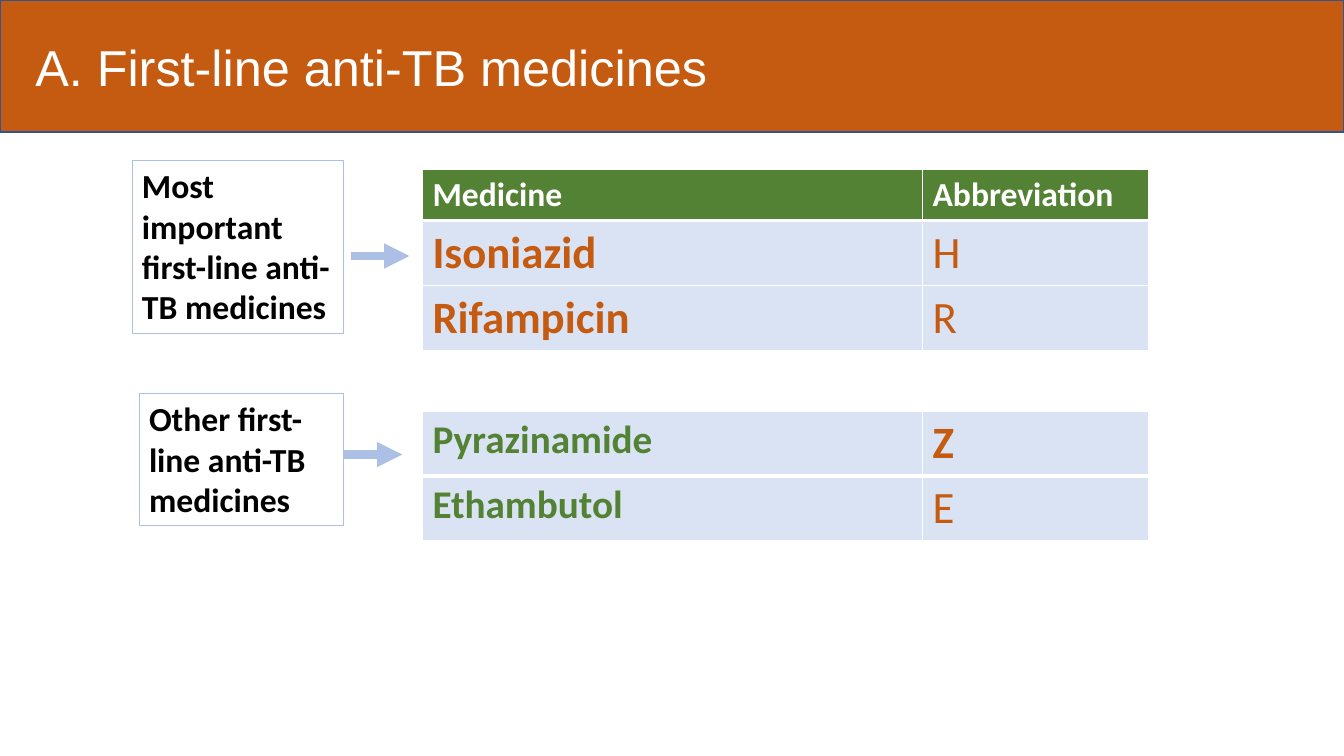
from lxml.etree import SubElement
from pptx import Presentation
from pptx.dml.color import RGBColor
from pptx.enum.shapes import MSO_CONNECTOR, MSO_SHAPE
from pptx.enum.text import MSO_ANCHOR, MSO_AUTO_SIZE, PP_ALIGN
from pptx.oxml.ns import qn
from pptx.util import Inches, Pt

COLORS = {
    "orange": "C55A11", "green": "548235", "pale": "DAE3F3", "blue": "ABC0E4",
    "navy": "325491", "white": "FFFFFF", "black": "000000",
}
TITLE = "A. First-line anti-TB medicines"

# Cell styles: size, colour, bold, fill
HEADER = (24, "white", True, "green")
MAIN_NAME = (32, "orange", True, "pale")
OTHER_NAME = (28, "green", True, "pale")
LETTER = (32, "orange", False, "pale")

# Each row: height, then (text, style) for each cell
GROUPS = [
    {
        "label": "Most important first-line anti-TB medicines",
        "box": (1.31, 1.59, 2.1, 1.72),
        "arrow": (3.48, 2.54),
        "table_top": 1.68,
        "rows": [
            (0.49, ("Medicine", HEADER), ("Abbreviation", HEADER)),
            (0.64, ("Isoniazid", MAIN_NAME), ("H", LETTER)),
            (0.64, ("Rifampicin", MAIN_NAME), ("R", LETTER)),
        ],
    },
    {
        "label": "Other first-line anti-TB medicines",
        "box": (1.38, 3.9, 2.03, 1.31),
        "arrow": (3.41, 4.51),
        "table_top": 4.08,
        "rows": [
            (0.64, ("Pyrazinamide", OTHER_NAME), ("Z", MAIN_NAME)),
            (0.63, ("Ethambutol", OTHER_NAME), ("E", LETTER)),
        ],
    },
]
TABLE_LEFT = 4.19
COLUMN_WIDTHS = (4.96, 2.24)
ARROW_LENGTH = 0.58


def color(name):
    return RGBColor.from_string(COLORS[name])


def write(text_frame, text, size, color_name, bold=False, font="Calibri"):
    paragraph = text_frame.paragraphs[0]
    paragraph.alignment = PP_ALIGN.LEFT
    run = paragraph.add_run()
    run.text = text
    run.font.name = font
    run.font.size = Pt(size)
    run.font.bold = bold
    run.font.color.rgb = color(color_name)


def add_title(slide):
    title = slide.shapes.title
    title.left, title.top = Inches(0), Inches(0)
    title.width, title.height = Inches(13.33), Inches(1.31)
    title.fill.solid()
    title.fill.fore_color.rgb = color("orange")
    title.line.color.rgb = color("navy")
    title.line.width = Pt(1)
    text_frame = title.text_frame
    text_frame.auto_size = MSO_AUTO_SIZE.NONE
    text_frame.vertical_anchor = MSO_ANCHOR.MIDDLE
    text_frame.margin_left = Inches(0.35)
    write(text_frame, TITLE, 36, "white", font="Arial")


def add_label(slide, text, box):
    shape = slide.shapes.add_shape(MSO_SHAPE.RECTANGLE, *map(Inches, box))
    shape.shadow.inherit = False
    shape.fill.background()
    shape.line.color.rgb = color("blue")
    shape.line.width = Pt(0.75)
    shape.text_frame.word_wrap = True
    shape.text_frame.vertical_anchor = MSO_ANCHOR.TOP
    write(shape.text_frame, text, 24, "black", bold=True)


def add_arrow(slide, left, top):
    arrow = slide.shapes.add_connector(
        MSO_CONNECTOR.STRAIGHT, Inches(left), Inches(top),
        Inches(left + ARROW_LENGTH), Inches(top))
    arrow.line.color.rgb = color("blue")
    arrow.line.width = Pt(6)
    SubElement(arrow.line._get_or_add_ln(), qn("a:tailEnd"), type="triangle")
    SubElement(arrow._element.spPr, qn("a:effectLst"))


def add_borders(cell, widths):
    """Draw white borders; widths maps side letters to points."""
    properties = cell._tc.get_or_add_tcPr()
    for side, width in widths.items():
        line = SubElement(properties, qn("a:ln" + side), w=str(Pt(width)))
        fill = SubElement(line, qn("a:solidFill"))
        SubElement(fill, qn("a:srgbClr"), val=COLORS["white"])


def add_medicine_table(slide, top, rows):
    table = slide.shapes.add_table(
        len(rows), len(COLUMN_WIDTHS), Inches(TABLE_LEFT), Inches(top),
        Inches(sum(COLUMN_WIDTHS)), Inches(sum(row[0] for row in rows))).table
    table.first_row = table.horz_banding = False
    for column, width in zip(table.columns, COLUMN_WIDTHS):
        column.width = Inches(width)
    for row_index, (height, *cells) in enumerate(rows):
        table.rows[row_index].height = Inches(height)
        top_width = 3 if row_index == 1 else 1
        bottom_width = 3 if row_index == 0 else 1
        for column_index, (text, style) in enumerate(cells):
            size, color_name, bold, fill_name = style
            cell = table.cell(row_index, column_index)
            add_borders(cell, {"L": 1, "R": 1, "T": top_width, "B": bottom_width})
            cell.fill.solid()
            cell.fill.fore_color.rgb = color(fill_name)
            write(cell.text_frame, text, size, color_name, bold)


def main():
    presentation = Presentation()
    presentation.slide_width = Inches(13.33)
    presentation.slide_height = Inches(7.5)
    slide = presentation.slides.add_slide(presentation.slide_layouts[5])
    add_title(slide)
    for group in GROUPS:
        add_label(slide, group["label"], group["box"])
        add_arrow(slide, *group["arrow"])
        add_medicine_table(slide, group["table_top"], group["rows"])
    presentation.save("out.pptx")


if __name__ == "__main__":
    main()
